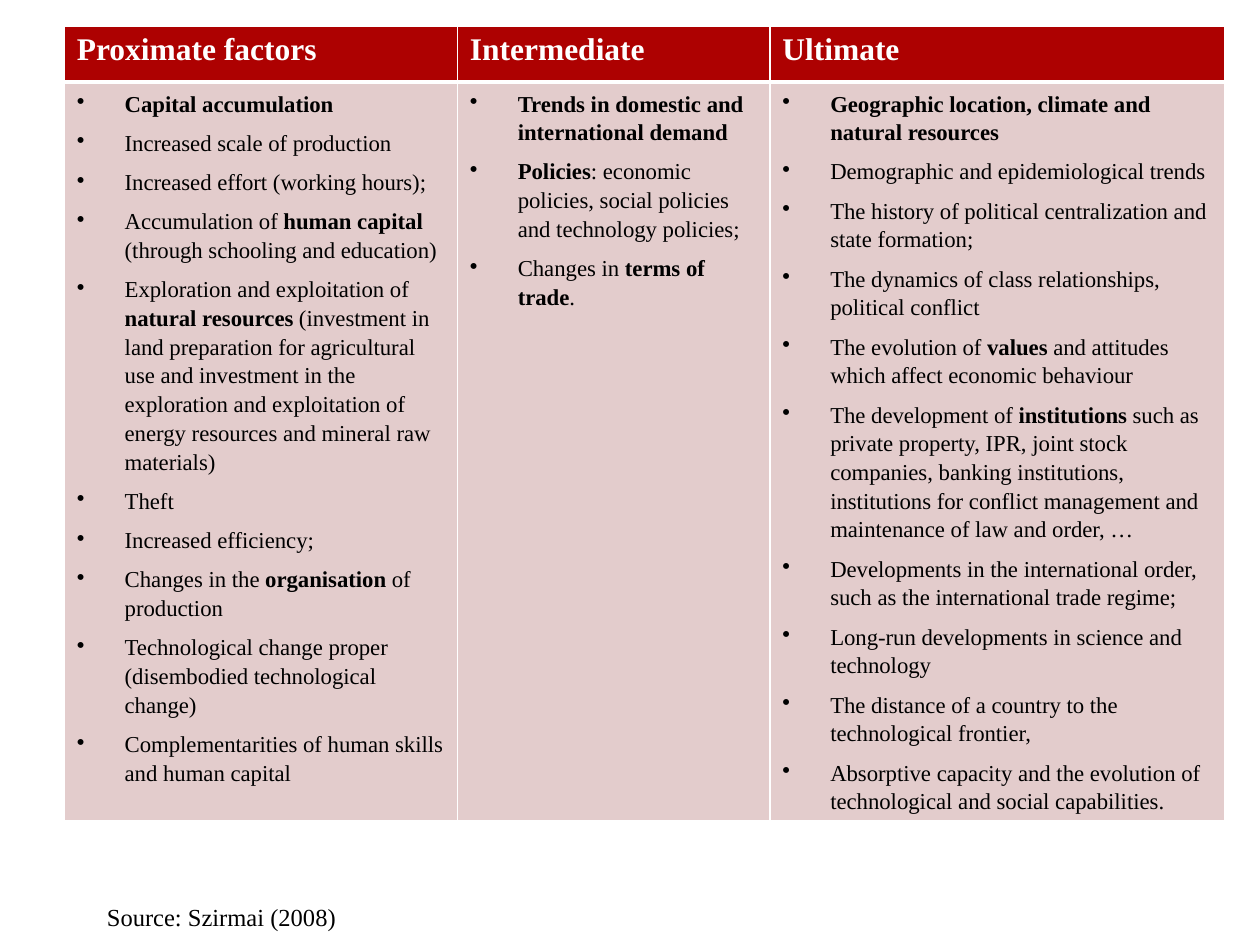
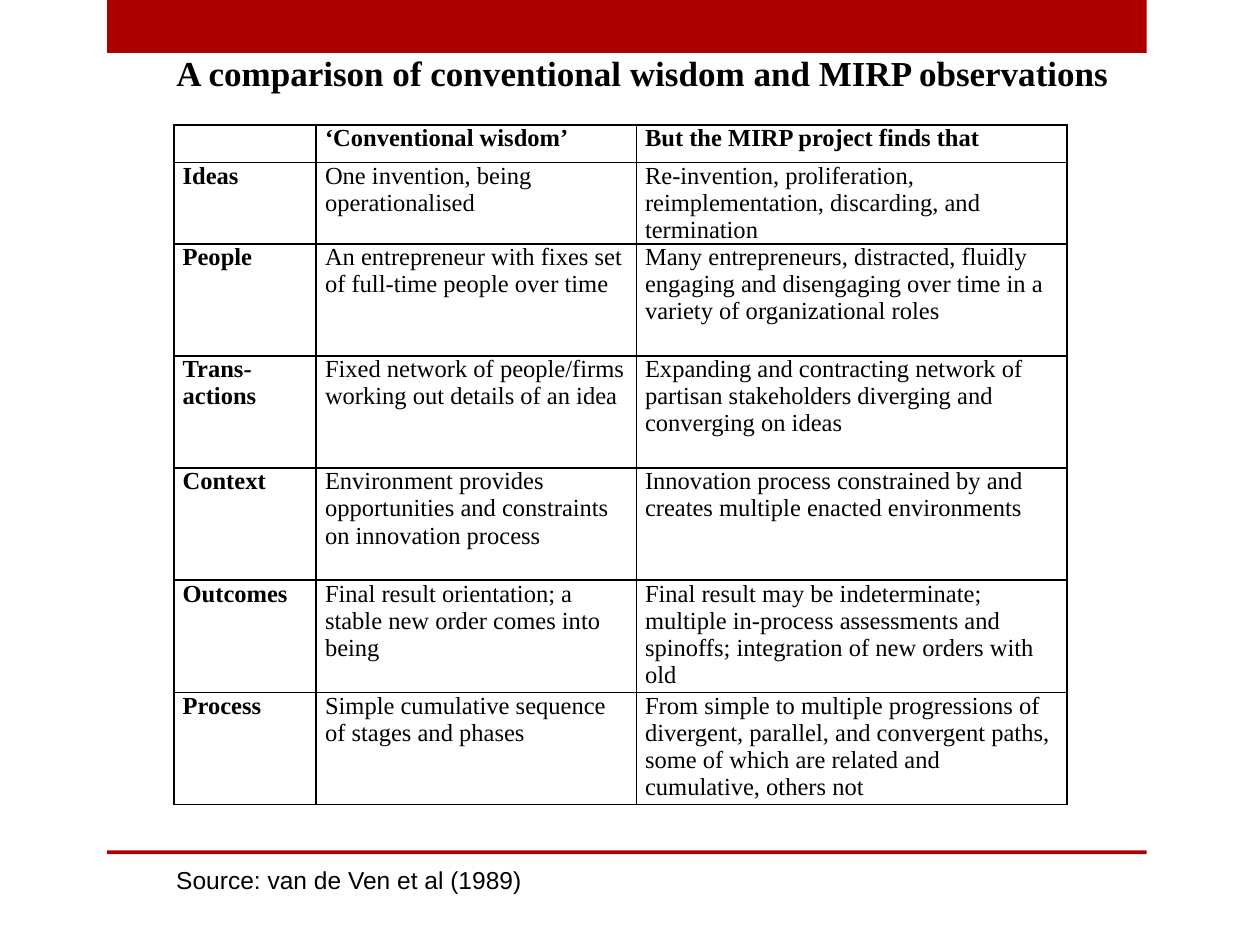
from dataclasses import dataclass

from lxml.etree import SubElement
from pptx import Presentation
from pptx.dml.color import RGBColor
from pptx.enum.shapes import MSO_SHAPE
from pptx.enum.text import MSO_ANCHOR, MSO_AUTO_SIZE, PP_ALIGN
from pptx.oxml.ns import qn
from pptx.util import Inches, Pt


@dataclass(frozen=True)
class Theme:
    red: str = "AD0101"
    pink: str = "E3CCCC"
    black: str = "000000"
    white: str = "FFFFFF"
    serif: str = "Times New Roman"
    sans: str = "Arial"
    title: int = 20
    heading: int = 18
    body: int = 14
    bullet: int = 13


THEME = Theme()

# Content: **...** marks bold words
FACTORS = {
    "Proximate factors": [
        "**Capital accumulation**",
        "Increased scale of production",
        "Increased effort (working hours);",
        "Accumulation of **human capital **(through schooling and education)",
        "Exploration and exploitation of **natural resources **(investment in land "
        "preparation for agricultural use and investment in the exploration and "
        "exploitation of energy resources and mineral raw materials)",
        "Theft",
        "Increased efficiency;",
        "Changes in the **organisation** of production",
        "Technological change proper (disembodied technological change)",
        "Complementarities of human skills and human capital",
    ],
    "Intermediate": [
        "**Trends in domestic and international demand**",
        "**Policies**: economic policies, social policies and technology policies;",
        "Changes in **terms of trade**.",
    ],
    "Ultimate": [
        "**Geographic location, climate and natural resources**",
        "Demographic and epidemiological trends",
        "The history of political centralization and state formation;",
        "The dynamics of class relationships, political conflict",
        "The evolution of **values** and attitudes which affect economic behaviour",
        "The development of **institutions** such as private property, IPR, joint stock "
        "companies, banking institutions, institutions for conflict management and "
        "maintenance of law and order, …",
        "Developments in the international order, such as the international trade regime;",
        "Long-run developments in science and technology",
        "The distance of a country to the technological frontier,",
        "Absorptive capacity and the evolution of technological and social capabilities.",
    ],
}
FACTORS_SOURCE = "Source: Szirmai (2008)"

COMPARISON_TITLE = "A comparison of conventional wisdom and MIRP observations"
COMPARISON = [
    ("", "‘Conventional wisdom’", "But the MIRP project finds that"),
    ("Ideas", "One invention, being operationalised",
     "Re-invention, proliferation, reimplementation, discarding, and termination"),
    ("People", "An entrepreneur with fixes set of full-time people over time",
     "Many entrepreneurs, distracted, fluidly engaging and disengaging over time "
     "in a variety of organizational roles"),
    ("Trans-actions", "Fixed network of people/firms working out details of an idea",
     "Expanding and contracting network of partisan stakeholders diverging and "
     "converging on ideas"),
    ("Context", "Environment provides opportunities and constraints on innovation process",
     "Innovation process constrained by and creates multiple enacted environments"),
    ("Outcomes", "Final result orientation; a stable new order comes into being",
     "Final result may be indeterminate; multiple in-process assessments and "
     "spinoffs; integration of new orders with old"),
    ("Process", "Simple cumulative sequence of stages and phases",
     "From simple to multiple progressions of divergent, parallel, and convergent "
     "paths, some of which are related and cumulative, others not"),
]
COMPARISON_SOURCE = "Source: van de Ven et al (1989)"


# Text helpers
def set_font(para, size, color=THEME.black, name=THEME.serif, bold=None):
    para.font.size = Pt(size)
    para.font.name = name
    para.font.color.rgb = RGBColor.from_string(color)
    para.font.bold = bold


def add_source(page, text, left, top, width, font_name):
    box = page.shapes.add_textbox(Inches(left), Inches(top), Inches(width), Inches(0.34))
    box.text_frame.word_wrap = False
    para = box.text_frame.paragraphs[0]
    para.text = text
    set_font(para, THEME.body, name=font_name)


def write_bullet(para, text):
    para.line_spacing = 1.15
    para.space_after = Pt(6)
    properties = para._p.get_or_add_pPr()
    properties.set("marL", str(Inches(0.38)))
    properties.set("indent", str(-Inches(0.38)))
    SubElement(properties, qn("a:buChar"), char="•")
    tabs = SubElement(properties, qn("a:tabLst"))
    SubElement(tabs, qn("a:tab"), pos=str(Inches(0.25)), algn="l")
    set_font(para, THEME.bullet)
    for position, piece in enumerate(text.split("**")):
        if piece:
            span = para.add_run()
            span.text = piece
            span.font.bold = position % 2 == 1


# Table helpers
def add_grid(page, left, top, widths, heights):
    frame = page.shapes.add_table(len(heights), len(widths), Inches(left), Inches(top),
                                  Inches(sum(widths)), Inches(sum(heights)))
    table = frame.table
    table.horz_banding = False
    for column, width in zip(table.columns, widths):
        column.width = Inches(width)
    for row, height in zip(table.rows, heights):
        row.height = Inches(height)
    return table


def style_cell(cell, border, fill=None, top=1, bottom=1):
    properties = cell._tc.get_or_add_tcPr()
    for side, width in (("lnL", 1), ("lnR", 1), ("lnT", top), ("lnB", bottom)):
        line = SubElement(properties, qn(f"a:{side}"), w=str(Pt(width)))
        solid = SubElement(line, qn("a:solidFill"))
        SubElement(solid, qn("a:srgbClr"), val=border)
    if fill:
        cell.fill.solid()
        cell.fill.fore_color.rgb = RGBColor.from_string(fill)
    else:
        cell.fill.background()


# Slides
def build_factors(deck):
    page = deck.slides.add_slide(deck.slide_layouts[6])
    table = add_grid(page, 0.51, 0.21, (3.12, 2.48, 3.61), (0.44, 4.55))
    for column, (heading, bullets) in enumerate(FACTORS.items()):
        head, body = table.cell(0, column), table.cell(1, column)
        style_cell(head, THEME.white, THEME.red, bottom=3)
        style_cell(body, THEME.white, THEME.pink, top=3)
        head.text = heading
        set_font(head.text_frame.paragraphs[0], THEME.heading, THEME.white, bold=True)
        for index, text in enumerate(bullets):
            frame = body.text_frame
            write_bullet(frame.add_paragraph() if index else frame.paragraphs[0], text)
    add_source(page, FACTORS_SOURCE, 0.75, 7.11, 2.08, THEME.serif)


def build_comparison(deck):
    page = deck.slides.add_slide(deck.slide_layouts[5])

    # Red bands at top and bottom
    for top, height in ((0, 0.42), (6.75, 0.03)):
        band = page.shapes.add_shape(MSO_SHAPE.RECTANGLE, Inches(0.85), Inches(top),
                                     Inches(8.25), Inches(height))
        band.shadow.inherit = False
        band.fill.solid()
        band.fill.fore_color.rgb = RGBColor.from_string(THEME.red)
        band.line.fill.background()

    # Title
    title = page.shapes.title
    title.left, title.top = Inches(1.3), Inches(0.36)
    title.width, title.height = Inches(8.19), Inches(0.44)
    title.text_frame.text = COMPARISON_TITLE
    title.text_frame.auto_size = MSO_AUTO_SIZE.NONE
    title.text_frame.vertical_anchor = MSO_ANCHOR.TOP
    para = title.text_frame.paragraphs[0]
    para.alignment = PP_ALIGN.LEFT
    set_font(para, THEME.title, bold=True)

    # Comparison table: first row and first column are bold
    heights = [0.3, 0.59] + [0.89] * (len(COMPARISON) - 2)
    table = add_grid(page, 1.38, 0.99, (1.13, 2.54, 3.42), heights)
    for row, texts in enumerate(COMPARISON):
        for column, text in enumerate(texts):
            cell = table.cell(row, column)
            style_cell(cell, THEME.black)
            cell.margin_left = cell.margin_right = Inches(0.07)
            cell.margin_top = cell.margin_bottom = 0
            cell.text = text
            set_font(cell.text_frame.paragraphs[0], THEME.body,
                     bold=row == 0 or column == 0)
    add_source(page, COMPARISON_SOURCE, 1.3, 6.82, 2.95, THEME.sans)


def main():
    deck = Presentation()
    deck.slide_width, deck.slide_height = Inches(10), Inches(7.5)
    build_factors(deck)
    build_comparison(deck)
    deck.save("out.pptx")


if __name__ == "__main__":
    main()
